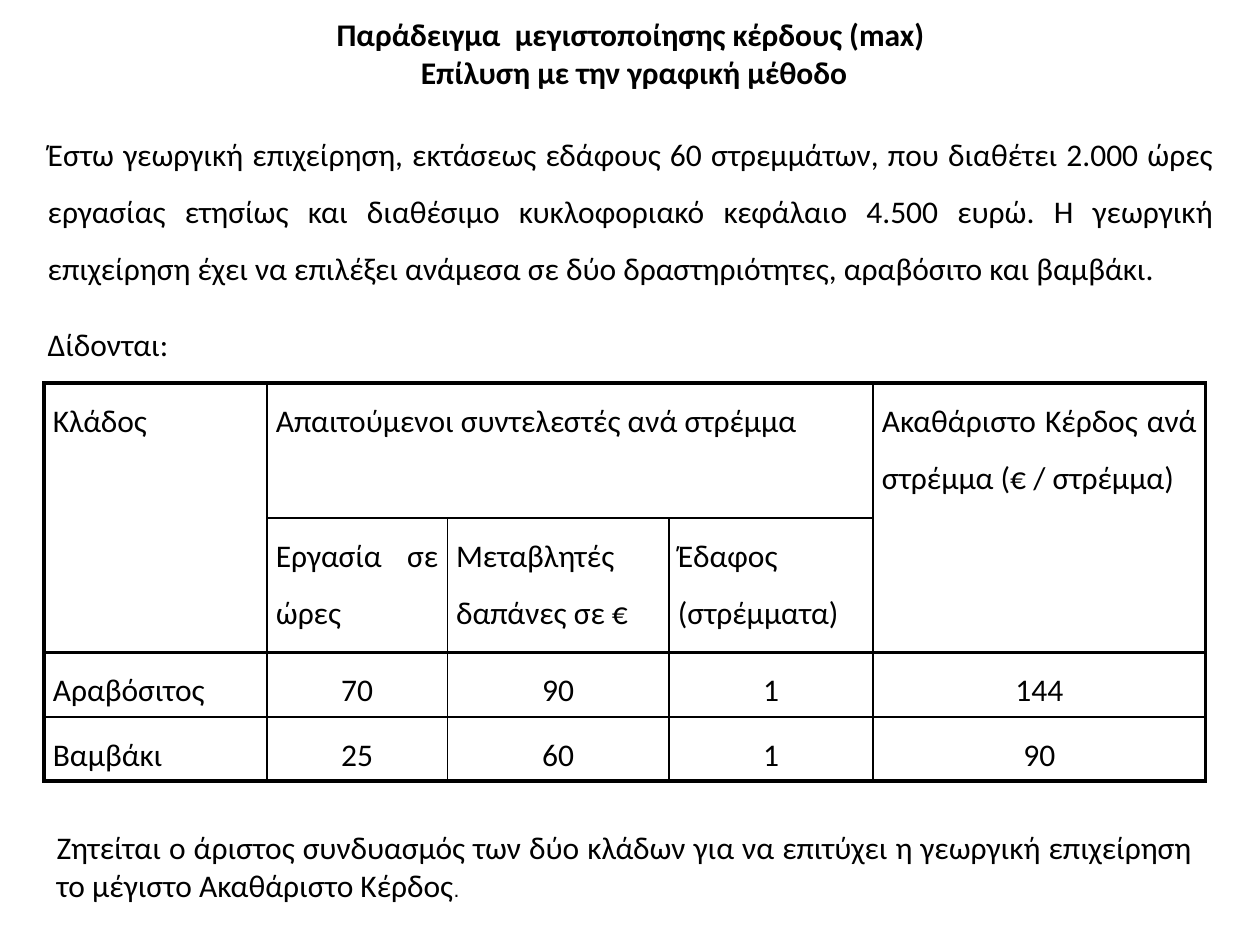
from dataclasses import dataclass

from lxml.etree import SubElement
from pptx import Presentation
from pptx.dml.color import RGBColor
from pptx.enum.text import MSO_ANCHOR as Anchor, MSO_AUTO_SIZE as AutoSize, PP_ALIGN as Align
from pptx.oxml.ns import qn
from pptx.util import Inches, Pt


@dataclass(frozen=True)
class Theme:
    ink: RGBColor = RGBColor(0, 0, 0)
    font: str = "Calibri"
    stop_font: str = "Arial"
    size: int = 18
    stop_size: int = 12
    outer: float = 2.25
    header: float = 1.5
    inner: float = 1


THEME = Theme()

COLUMNS = [1.77, 1.43, 1.76, 1.62, 2.64]
ROWS = [1.07, 1.07, 0.51, 0.51]
CELLS = [
    ["Κλάδος", "Απαιτούμενοι συντελεστές ανά στρέμμα", "", "",
     "Ακαθάριστο Κέρδος ανά στρέμμα (€ / στρέμμα)"],
    ["", "Εργασία σε ώρες", "Μεταβλητές δαπάνες σε €", "Έδαφος (στρέμματα)", ""],
    ["Αραβόσιτος", "70", "90", "1", "144"],
    ["Βαμβάκι", "25", "60", "1", "90"],
]
PROBLEM = (
    "Έστω γεωργική επιχείρηση, εκτάσεως εδάφους 60 στρεμμάτων, που διαθέτει 2.000 ώρες "
    "εργασίας ετησίως και διαθέσιμο κυκλοφοριακό κεφάλαιο 4.500 ευρώ. Η γεωργική "
    "επιχείρηση έχει να επιλέξει ανάμεσα σε δύο δραστηριότητες, αραβόσιτο και βαμβάκι."
)
QUESTION = (
    "Ζητείται ο άριστος συνδυασμός των δύο κλάδων για να επιτύχει η γεωργική "
    "επιχείρηση το μέγιστο Ακαθάριστο Κέρδος"
)


def add_span(para, text, bold=False, size=THEME.size, font=THEME.font):
    span = para.add_run()
    span.text = text
    span.font.name = font
    span.font.size = Pt(size)
    span.font.bold = bold
    span.font.color.rgb = THEME.ink


def format_para(para, align, spacing=1.0, before=0):
    para.alignment = align
    para.line_spacing = spacing
    para.space_before = Pt(before)


def add_text_box(page, left, top, width, height):
    box = page.shapes.add_textbox(*map(Inches, (left, top, width, height)))
    frame = box.text_frame
    frame.word_wrap = True
    frame.auto_size = AutoSize.SHAPE_TO_FIT_TEXT
    frame.vertical_anchor = Anchor.MIDDLE
    return frame


def add_introduction(page):
    frame = add_text_box(page, 0.28, 0.06, 9.45, 2.88)
    lines = [
        ("Παράδειγμα  μεγιστοποίησης κέρδους (max)", True, Align.CENTER, 1.0, 0),
        (" Επίλυση με την γραφική μέθοδο", True, Align.CENTER, 1.0, 0),
        (PROBLEM, False, Align.JUSTIFY, 1.5, 14.6),
        ("Δίδονται:", False, Align.JUSTIFY, 1.0, 22),
    ]
    for index, (text, bold, align, spacing, before) in enumerate(lines):
        para = frame.add_paragraph() if index else frame.paragraphs[0]
        format_para(para, align, spacing, before)
        add_span(para, text, bold)


def set_borders(cell, weights):
    """Draw the left, right, top and bottom lines; a weight of 0 hides one."""
    properties = cell._tc.get_or_add_tcPr()
    for side, weight in zip("LRTB", weights):
        line = SubElement(properties, qn(f"a:ln{side}"), w=str(Pt(weight)))
        if weight:
            fill = SubElement(line, qn("a:solidFill"))
            SubElement(fill, qn("a:srgbClr"), val=str(THEME.ink))
        else:
            SubElement(line, qn("a:noFill"))


def border_weights(row, column):
    last = len(COLUMNS) - 1
    across = [THEME.outer, THEME.inner, THEME.header, THEME.inner, THEME.outer]
    if column in (0, last):
        across[1] = 0  # the outer headings run over both heading rows
    left = THEME.outer if column == 0 else THEME.inner
    right = THEME.outer if column == last else THEME.inner
    return left, right, across[row], across[row + 1]


def fill_cell(cell, text, align):
    cell.margin_left = cell.margin_right = Inches(0.07)
    cell.margin_top = cell.margin_bottom = 0
    if text:
        para = cell.text_frame.paragraphs[0]
        format_para(para, align, 1.5, 12)
        add_span(para, text)


def add_requirements_table(page):
    table = page.shapes.add_table(
        len(ROWS), len(COLUMNS), *map(Inches, (0.35, 3.04, 9.21, 3.15))
    ).table
    table.first_row = table.horz_banding = False
    for column, width in zip(table.columns, COLUMNS):
        column.width = Inches(width)
    for row, height in zip(table.rows, ROWS):
        row.height = Inches(height)
    table.cell(0, 1).merge(table.cell(0, 3))

    for row, texts in enumerate(CELLS):
        for column, text in enumerate(texts):
            cell = table.cell(row, column)
            if not cell.is_spanned:
                set_borders(cell, border_weights(row, column))
                fill_cell(cell, text, Align.CENTER if text.isdigit() else Align.JUSTIFY)
            cell.fill.background()


def add_question(page):
    para = add_text_box(page, 0.35, 6.52, 9.21, 0.71).paragraphs[0]
    format_para(para, Align.JUSTIFY)
    add_span(para, QUESTION)
    add_span(para, ".", size=THEME.stop_size, font=THEME.stop_font)


def main():
    deck = Presentation()
    deck.slide_width, deck.slide_height = Inches(10), Inches(7.5)
    page = deck.slides.add_slide(deck.slide_layouts[6])
    add_introduction(page)
    add_requirements_table(page)
    add_question(page)
    deck.save("out.pptx")


if __name__ == "__main__":
    main()
